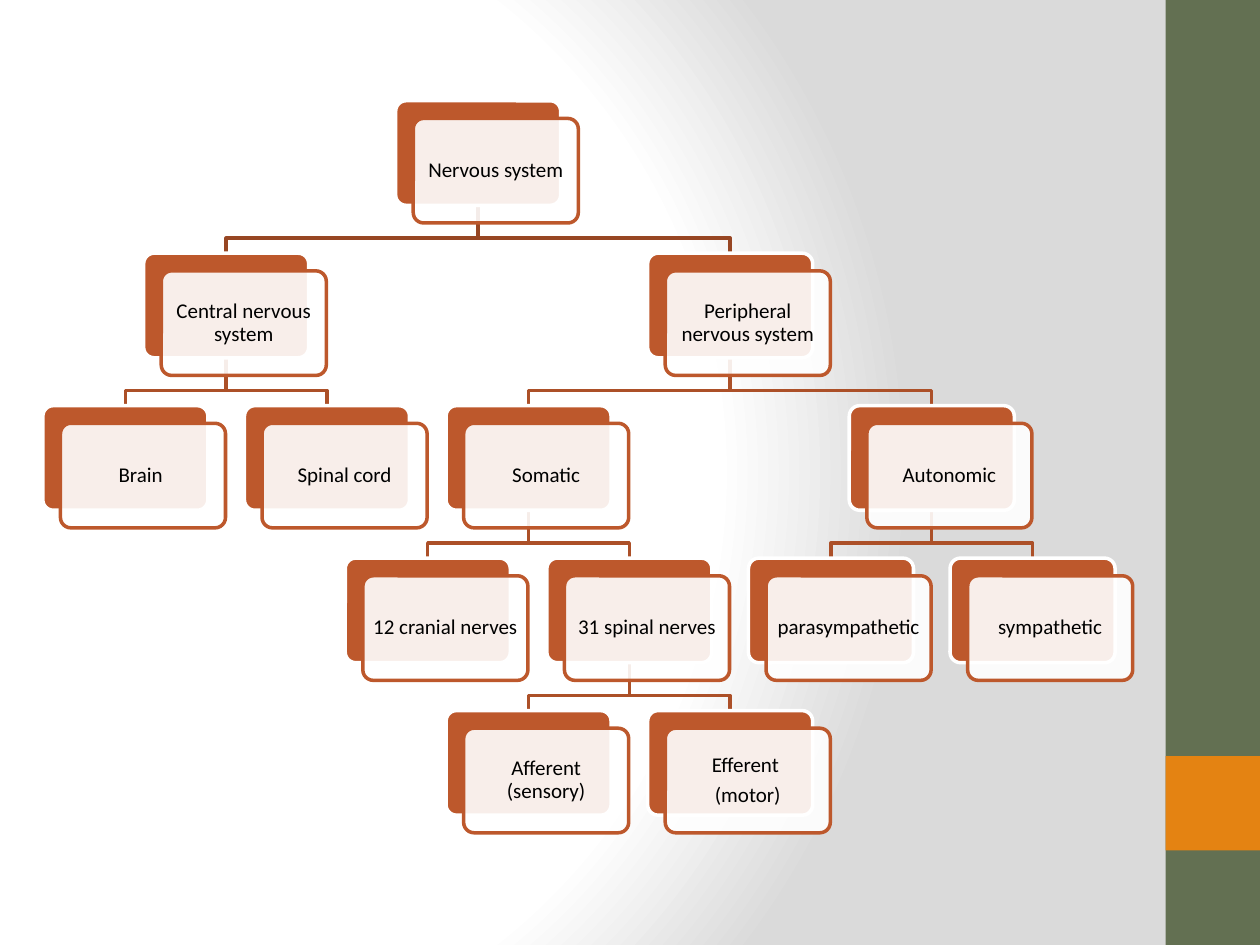
from dataclasses import dataclass

from pptx import Presentation
from pptx.dml.color import RGBColor
from pptx.enum.shapes import MSO_SHAPE
from pptx.enum.text import MSO_ANCHOR, PP_ALIGN
from pptx.oxml import parse_xml
from pptx.oxml.ns import nsdecls, qn
from pptx.util import Inches, Pt


@dataclass(frozen=True)
class Theme:
    """Colours, font and type sizes of the slide."""
    white: str = "FFFFFF"
    shade: str = "DADADA"
    text: str = "000000"
    sidebar: str = "637052"
    accent: str = "E48312"
    box: str = "BD582C"
    top_branch: str = "974623"
    branch: str = "AC5028"
    font: str = "Calibri"
    size: float = 12
    line: float = 2


@dataclass(frozen=True)
class Node:
    """One box of the tree, placed by its column and its children."""
    label: str
    column: float
    children: tuple = ()


THEME = Theme()
LEFT, TOP = 0.34, 0.8
COLUMN, ROW = 0.8, 1.21
WIDTH, HEIGHT = 1.31, 0.83
OFFSET_X, OFFSET_Y = 0.14, 0.14
ELBOW = 0.26

TREE = Node("Nervous system", 3.5, (
    Node("Central nervous system", 1, (
        Node("Brain ", 0),
        Node("Spinal cord", 2),
    )),
    Node("Peripheral nervous system", 6, (
        Node("Somatic", 4, (
            Node("12 cranial nerves", 3),
            Node("31 spinal nerves", 5, (
                Node("Afferent (sensory)", 4),
                Node("Efferent \n(motor)", 6),
            )),
        )),
        Node("Autonomic", 8, (
            Node("parasympathetic", 7),
            Node("sympathetic", 9),
        )),
    )),
))


def set_background(slide):
    """Fill the background with a circular gradient."""
    slide.background.fill.gradient()
    stops = ((0, THEME.white), (75, THEME.white), (100, THEME.shade))
    stop_xml = "".join(
        f'<a:gs pos="{position * 1000}"><a:srgbClr val="{color}"/></a:gs>'
        for position, color in stops)
    gradient = parse_xml(
        f'<a:gradFill {nsdecls("a")} rotWithShape="1"><a:gsLst>{stop_xml}</a:gsLst>'
        '<a:path path="circle"><a:fillToRect l="20000" t="50000" r="100000" b="50000"/>'
        '</a:path></a:gradFill>')
    current = slide.element.find(".//" + qn("a:gradFill"))
    current.getparent().replace(current, gradient)


def add_box(slide, left, top, width, height, fill, line=None,
            kind=MSO_SHAPE.RECTANGLE, opacity=100):
    """Add a filled preset shape and return it."""
    shape = slide.shapes.add_shape(
        kind, Inches(left), Inches(top), Inches(width), Inches(height))
    shape.shadow.inherit = False
    shape.fill.solid()
    shape.fill.fore_color.rgb = RGBColor.from_string(fill)
    if opacity < 100:
        color = shape.fill._xPr.find(".//" + qn("a:srgbClr"))
        color.append(parse_xml(f'<a:alpha {nsdecls("a")} val="{opacity * 1000}"/>'))
    if line:
        shape.line.color.rgb = RGBColor.from_string(line)
        shape.line.width = Pt(THEME.line)
    else:
        shape.line.fill.background()
    if kind == MSO_SHAPE.ROUNDED_RECTANGLE:
        shape.adjustments[0] = 0.1
    return shape


def write_text(shape, text, size=THEME.size, color=THEME.text,
               align=PP_ALIGN.CENTER, inset=0.05):
    """Write text into a shape, one paragraph to a line."""
    frame = shape.text_frame
    frame.word_wrap = True
    frame.vertical_anchor = MSO_ANCHOR.MIDDLE
    frame.margin_left = frame.margin_right = Inches(inset)
    frame.margin_top = frame.margin_bottom = Inches(inset)
    frame.text = text
    for paragraph in frame.paragraphs:
        paragraph.alignment = align
        paragraph.line_spacing = 0.9
        paragraph.space_after = Pt(0.35 * size)
        paragraph.font.size = Pt(size)
        paragraph.font.name = THEME.font
        paragraph.font.color.rgb = RGBColor.from_string(color)


def node_position(node, level):
    """Return the left and top of a node's back box."""
    return LEFT + node.column * COLUMN, TOP + level * ROW


def add_branch(slide, parent, child, level):
    """Draw the elbow line from a parent down to its child."""
    parent_left, parent_top = node_position(parent, level)
    child_left, child_top = node_position(child, level + 1)
    start_x, end_x = parent_left + WIDTH / 2, child_left + WIDTH / 2
    start_y = parent_top + HEIGHT
    bend_y = start_y + ELBOW
    points = [(start_x, bend_y), (end_x, bend_y), (end_x, child_top)]
    builder = slide.shapes.build_freeform(Inches(start_x), Inches(start_y))
    builder.add_line_segments(
        [(Inches(x), Inches(y)) for x, y in points], close=False)
    branch = builder.convert_to_shape()
    branch.shadow.inherit = False
    branch.fill.background()
    color = THEME.branch if level else THEME.top_branch
    branch.line.color.rgb = RGBColor.from_string(color)
    branch.line.width = Pt(THEME.line)


def add_branches(slide, node, level=0):
    """Draw every branch below a node."""
    for child in node.children:
        add_branches(slide, child, level + 1)
        add_branch(slide, node, child, level)


def add_nodes(slide, node, level=0):
    """Draw a node as a back box and a labelled card, then its children."""
    left, top = node_position(node, level)
    rounded = MSO_SHAPE.ROUNDED_RECTANGLE
    add_box(slide, left, top, WIDTH, HEIGHT, THEME.box, THEME.white, rounded)
    card = add_box(slide, left + OFFSET_X, top + OFFSET_Y, WIDTH, HEIGHT,
                   THEME.white, THEME.box, rounded, opacity=90)
    write_text(card, node.label)
    for child in node.children:
        add_nodes(slide, child, level + 1)


def main():
    """Build the slide and save it."""
    presentation = Presentation()
    presentation.slide_width = Inches(10)
    presentation.slide_height = Inches(7.5)
    slide = presentation.slides.add_slide(presentation.slide_layouts[6])
    set_background(slide)
    add_box(slide, 9.25, 0, 0.75, 7.5, THEME.sidebar)
    add_box(slide, 9.25, 6, 0.75, 0.75, THEME.accent)
    add_branches(slide, TREE)
    add_nodes(slide, TREE)
    presentation.save("out.pptx")


if __name__ == "__main__":
    main()
